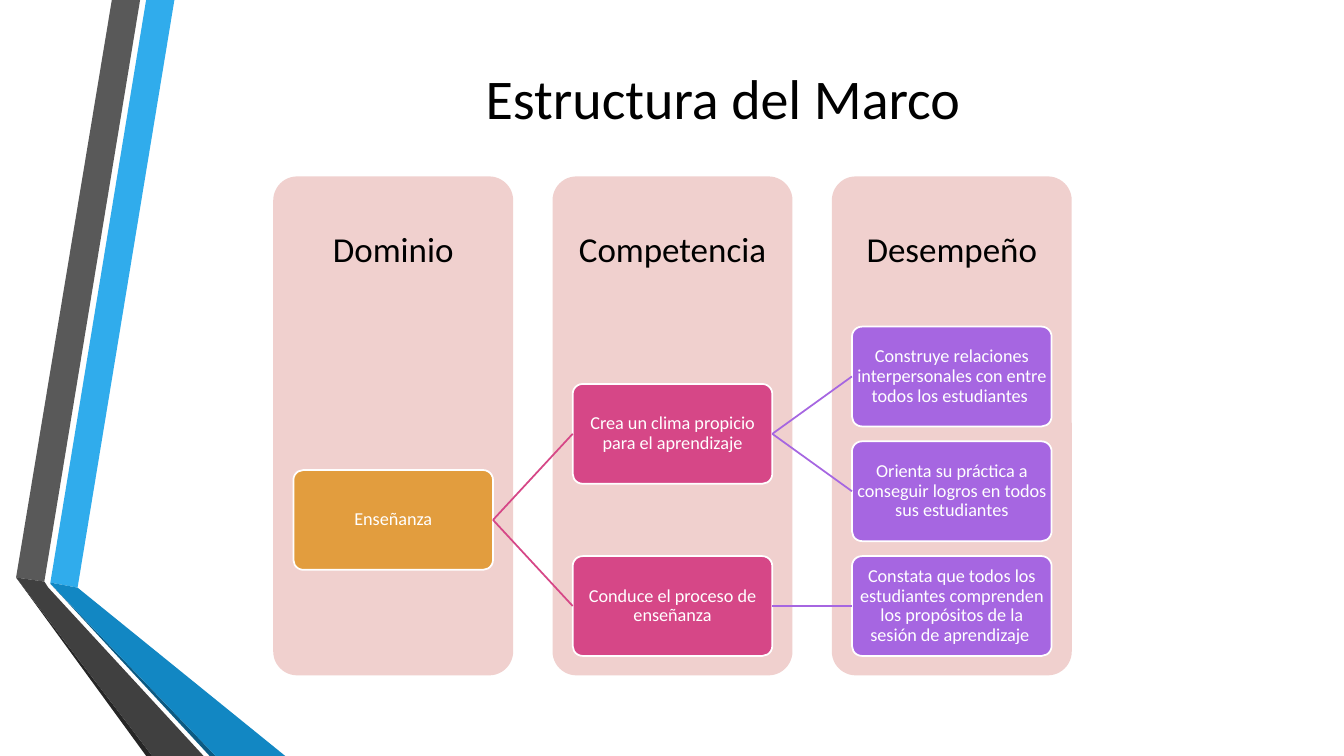
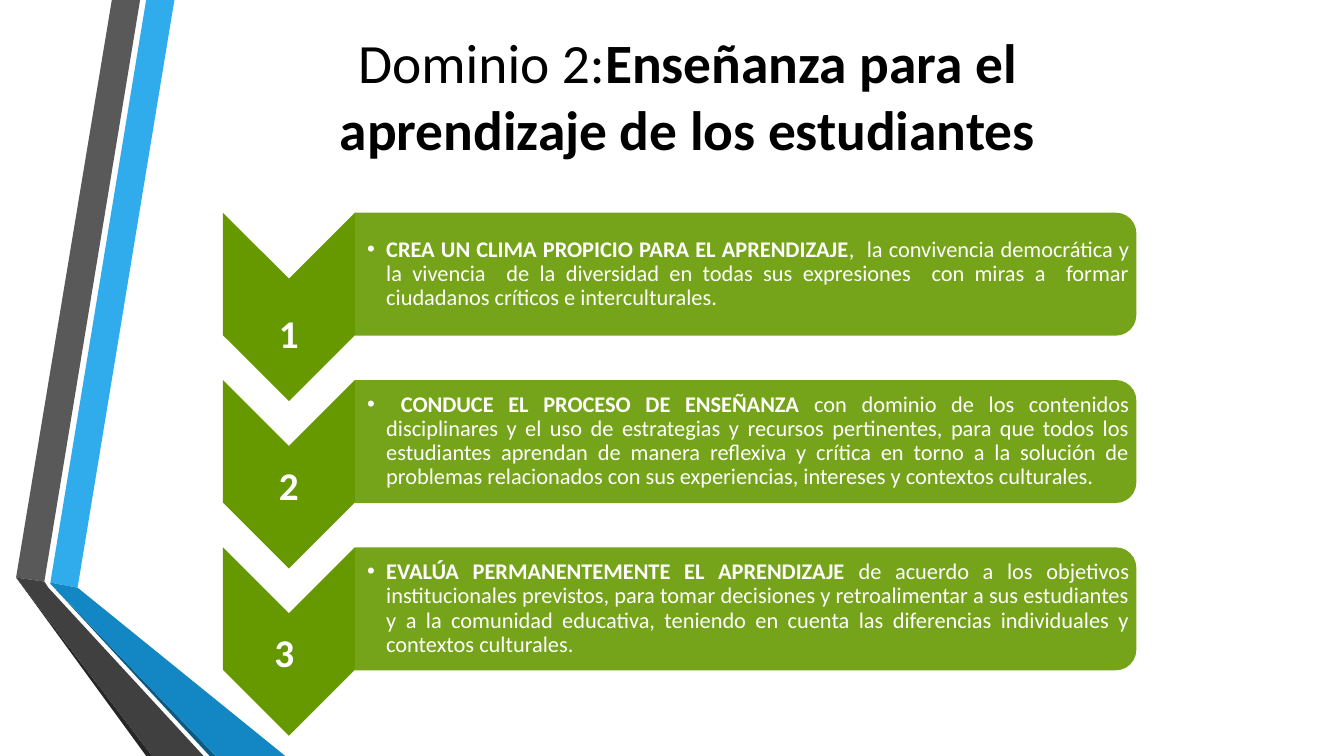
"""Builds two slides on the structure of a teaching framework."""
from dataclasses import dataclass

from lxml.etree import SubElement
from pptx import Presentation
from pptx.dml.color import RGBColor
from pptx.enum.shapes import MSO_CONNECTOR as Connector, MSO_SHAPE as Shape
from pptx.enum.text import MSO_ANCHOR as Anchor, MSO_AUTO_SIZE as AutoSize, PP_ALIGN as Align
from pptx.oxml.ns import qn
from pptx.util import Inches, Pt


@dataclass(frozen=True)
class Theme:
    font: str = "Calibri"
    black: str = "000000"
    white: str = "FFFFFF"
    column: str = "F0D0CE"
    levels: tuple = ("E29D3E", "D64787", "A666E1")
    step: str = "669900"
    step_opacity: int = 90
    title_size: float = 40
    long_title_size: float = 39.6
    heading_size: float = 25
    card_size: float = 13
    number_size: float = 28
    body_size: float = 16
    line_width: float = 1.25


THEME = Theme()
WIDTH, HEIGHT = 13.33, 7.5

RIBBONS = [
    ("30ACEC", [(0.5, 5.78), (0.77, 5.83), (1.73, 0), (1.45, 0)]),
    ("595959", [(1.39, 0), (1.11, 0), (0.16, 5.73), (0.44, 5.77)]),
    ("262626", [(0.16, 5.73), (1.45, HEIGHT), (1.51, HEIGHT)]),
    ("0C5A82", [(0.5, 5.79), (2.08, HEIGHT), (2.14, HEIGHT)]),
    ("1287C3", [(0.5, 5.79), (2.14, HEIGHT), (2.83, HEIGHT), (0.77, 5.83), (0.5, 5.78)]),
    ("404040", [(2.02, HEIGHT), (0.48, 5.83), (0.44, 5.77), (0.16, 5.73), (1.51, HEIGHT)]),
]

HEADINGS = ["Dominio", "Competencia", "Desempeño"]
TREE = ("Enseñanza", [
    ("Crea un clima propicio para el aprendizaje", [
        ("Construye relaciones interpersonales con entre todos los estudiantes ", []),
        ("Orienta su práctica a conseguir logros en todos sus estudiantes", []),
    ]),
    ("Conduce el proceso de enseñanza", [
        ("Constata que todos los estudiantes comprenden los propósitos "
         "de la sesión de aprendizaje ", []),
    ]),
])

STEPS = [
    ("1", 0.29, "CREA UN CLIMA PROPICIO PARA EL APRENDIZAJE",
     ",  la convivencia democrática y la vivencia  de la diversidad en todas sus expresiones  "
     "con miras a  formar ciudadanos críticos e interculturales."),
    ("2", 0.13, " CONDUCE EL PROCESO DE ENSEÑANZA ",
     "con dominio de los contenidos disciplinares y el uso de estrategias y recursos pertinentes, "
     "para que todos los estudiantes aprendan de manera reflexiva y crítica en torno a la solución "
     "de problemas relacionados con sus experiencias, intereses y contextos culturales."),
    ("3 ", 0.13, "EVALÚA PERMANENTEMENTE EL APRENDIZAJE ",
     "de acuerdo a los objetivos institucionales previstos, para tomar decisiones y retroalimentar "
     "a sus estudiantes y a la comunidad educativa, teniendo en cuenta las diferencias individuales "
     "y contextos culturales."),
]

COLUMN_LEFT, COLUMN_TOP, COLUMN_PITCH = 2.71, 1.75, 2.77
COLUMN_WIDTH, COLUMN_HEIGHT, HEADING_HEIGHT = 2.38, 4.95, 1.48
CARD_WIDTH, CARD_HEIGHT, CARD_TOP = 1.98, 0.99, 3.24
CARD_PITCH = CARD_HEIGHT * 1.15

STEP_LEFT, STEP_TOP, STEP_PITCH = 2.21, 2.11, 1.66
CHEVRON_WIDTH, CHEVRON_HEIGHT = 1.31, 1.87
PANEL_WIDTH, PANEL_HEIGHT = 7.75, 1.22


def color(value):
    return RGBColor.from_string(value)


def box(*lengths):
    return [Inches(length) for length in lengths]


def paint(shape, fill, line=None):
    shape.shadow.inherit = False
    shape.fill.solid()
    shape.fill.fore_color.rgb = color(fill)
    if line:
        shape.line.color.rgb = color(line)
        shape.line.width = Pt(THEME.line_width)
    else:
        shape.line.fill.background()


def write(shape, runs, size, text_color, align=Align.CENTER, insets=(0.01,) * 4, spacing=0.9):
    """Fills a shape with one paragraph of (text, bold) runs."""
    frame = shape.text_frame
    frame.word_wrap = True
    frame.auto_size = AutoSize.NONE
    frame.vertical_anchor = Anchor.MIDDLE
    frame.margin_left, frame.margin_top, frame.margin_right, frame.margin_bottom = box(*insets)
    paragraph = frame.paragraphs[0]
    paragraph.alignment = align
    paragraph.line_spacing = spacing
    font = paragraph.font
    font.name, font.size, font.color.rgb = THEME.font, Pt(size), color(text_color)
    for text, bold in runs:
        run = paragraph.add_run()
        run.text = text
        run.font.bold = bold
    return paragraph


def add_ribbons(layout, slide):
    """Draws the ribbons and moves them to the shared layout."""
    for index, (fill, points) in enumerate(RIBBONS):
        start, *others = [box(*point) for point in points]
        builder = slide.shapes.build_freeform(*start)
        builder.add_line_segments(others, close=True)
        ribbon = builder.convert_to_shape()
        paint(ribbon, fill)
        layout.shapes.element.insert(2 + index, ribbon.element)


def set_title(slide, runs, position, size):
    title = slide.shapes.title
    title.left, title.top, title.width, title.height = box(*position)
    write(title, runs, size, THEME.black, insets=(0.1, 0.05, 0.1, 0.05), spacing=1.0)


def add_column(slide, index, heading):
    column = slide.shapes.add_shape(Shape.ROUNDED_RECTANGLE, *box(
        COLUMN_LEFT + index * COLUMN_PITCH, COLUMN_TOP, COLUMN_WIDTH, COLUMN_HEIGHT))
    column.adjustments[0] = 0.1
    paint(column, THEME.column)
    write(column, [(heading, False)], THEME.heading_size, THEME.black,
          insets=(0, 0, 0, COLUMN_HEIGHT - HEADING_HEIGHT))


def add_link(slide, parent, child, line):
    link = slide.shapes.add_connector(Connector.STRAIGHT, 0, 0, 0, 0)
    link.begin_connect(parent, 3)
    link.end_connect(child, 1)
    link.line.color.rgb = color(line)
    link.line.width = Pt(THEME.line_width)
    SubElement(link.element.spPr, qn("a:effectLst"))


def add_branch(slide, node, level=0, row=0):
    """Draws a card centred on its children; returns it, its top and the next free row."""
    text, children = node
    top, next_row, cards = CARD_TOP + row * CARD_PITCH, row + 1, []
    if children:
        next_row, tops = row, []
        for child in children:
            card, child_top, next_row = add_branch(slide, child, level + 1, next_row)
            cards.append(card)
            tops.append(child_top)
        top = (tops[0] + tops[-1]) / 2
    left = COLUMN_LEFT + level * COLUMN_PITCH + (COLUMN_WIDTH - CARD_WIDTH) / 2
    parent = slide.shapes.add_shape(
        Shape.ROUNDED_RECTANGLE, *box(left, top, CARD_WIDTH, CARD_HEIGHT))
    parent.adjustments[0] = 0.1
    paint(parent, THEME.levels[level], THEME.white)
    write(parent, [(text, False)], THEME.card_size, THEME.white)
    for card in cards:
        add_link(slide, parent, card, THEME.levels[level + 1])
    return parent, top, next_row


def add_turned(slide, kind, left, top, width, height):
    """Adds a shape turned by 90 degrees that covers the given area."""
    shift = (width - height) / 2
    shape = slide.shapes.add_shape(kind, *box(left + shift, top - shift, height, width))
    shape.rotation = 90
    paint(shape, THEME.step)
    return shape


def add_bullet(paragraph):
    properties = paragraph._p.get_or_add_pPr()
    properties.set("marL", str(Inches(0.19)))
    properties.set("indent", str(-Inches(0.19)))
    SubElement(properties, qn("a:buFont"), typeface="Arial")
    SubElement(properties, qn("a:buChar"), char="•")
    default_font = properties.find(qn("a:defRPr"))
    if default_font is not None:
        properties.append(default_font)


def add_step(slide, index, number, drop, lead, detail):
    top = STEP_TOP + index * STEP_PITCH
    panel_left = STEP_LEFT + CHEVRON_WIDTH
    add_turned(slide, Shape.CHEVRON, STEP_LEFT, top, CHEVRON_WIDTH, CHEVRON_HEIGHT)
    label = slide.shapes.add_textbox(*box(
        STEP_LEFT, top + CHEVRON_WIDTH / 2 + drop, CHEVRON_WIDTH, CHEVRON_HEIGHT - CHEVRON_WIDTH))
    write(label, [(number, True)], THEME.number_size, THEME.white)
    panel = add_turned(slide, Shape.ROUND_2_SAME_RECTANGLE,
                       panel_left, top, PANEL_WIDTH, PANEL_HEIGHT)
    fill_color = panel.element.spPr.find(qn("a:solidFill"))[0]
    SubElement(fill_color, qn("a:alpha"), val=str(THEME.step_opacity * 1000))
    body = slide.shapes.add_textbox(*box(
        panel_left, top + 0.06, PANEL_WIDTH - 0.06, PANEL_HEIGHT - 0.12))
    add_bullet(write(body, [(lead, True), (detail, False)], THEME.body_size, THEME.white,
                     Align.JUSTIFY, insets=(0.12, 0.01, 0.01, 0.01)))


def main():
    presentation = Presentation()
    presentation.slide_width, presentation.slide_height = box(WIDTH, HEIGHT)
    layout = presentation.slide_layouts[5]

    structure = presentation.slides.add_slide(layout)
    add_ribbons(layout, structure)
    set_title(structure, [("Estructura del Marco", False)],
              (1.69, 0, 10.96, 1.92), THEME.title_size)
    for index, heading in enumerate(HEADINGS):
        add_column(structure, index, heading)
    add_branch(structure, TREE)

    domain = presentation.slides.add_slide(layout)
    set_title(domain, [("Dominio 2:", False),
                       ("Enseñanza para el aprendizaje de los estudiantes", True)],
              (2.32, 0.43, 9, 1.02), THEME.long_title_size)
    for index, step in enumerate(STEPS):
        add_step(domain, index, *step)

    presentation.save("out.pptx")


if __name__ == "__main__":
    main()
